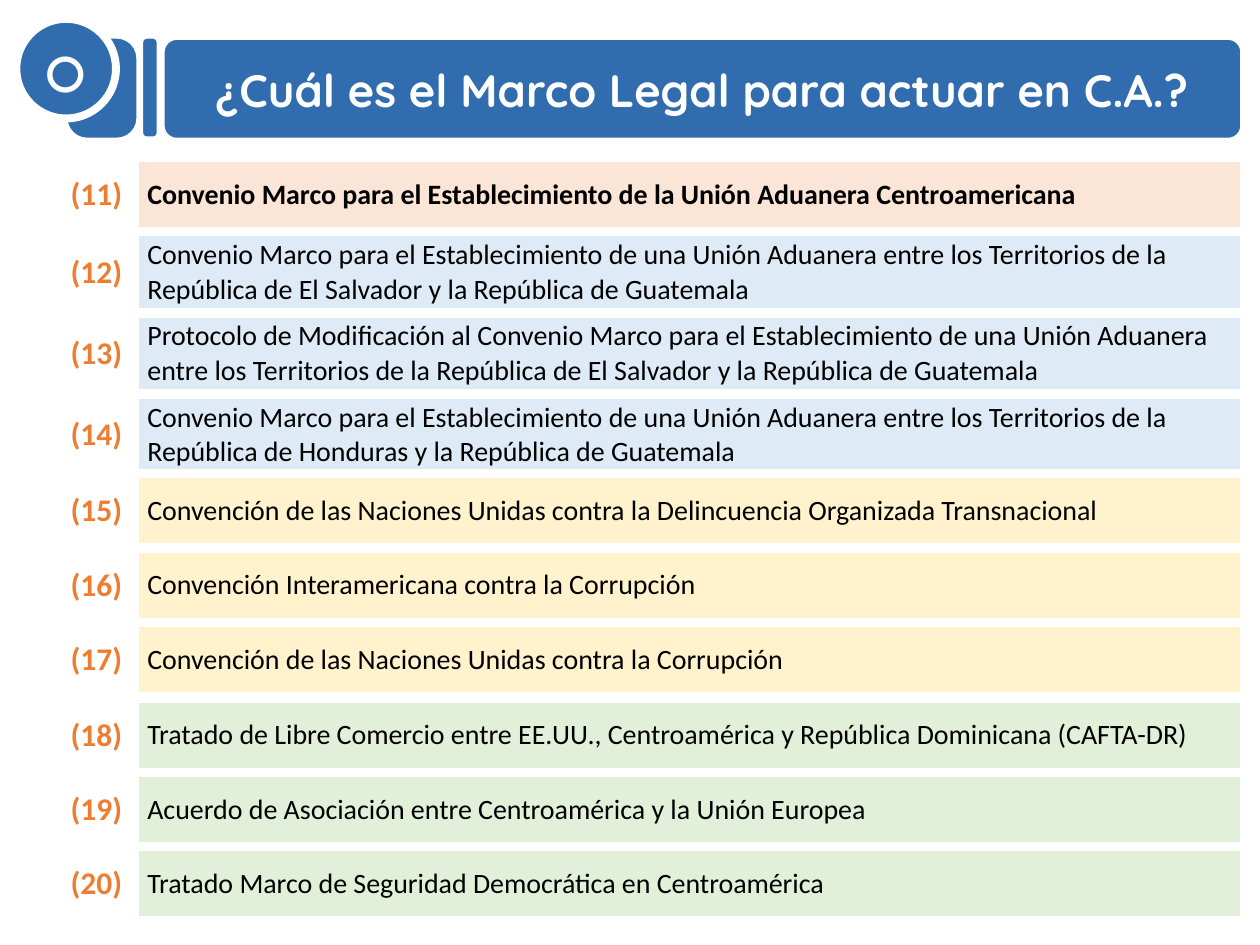
from dataclasses import dataclass

from lxml import etree
from pptx import Presentation
from pptx.dml.color import RGBColor
from pptx.enum import shapes, text
from pptx.oxml.ns import qn
from pptx.util import Inches, Pt


@dataclass(frozen=True)
class Theme:
    blue: str = "316CAE"
    white: str = "FFFFFF"
    black: str = "000000"
    orange: str = "ED7D31"
    peach: str = "FBE5D6"
    sky: str = "DEEBF7"
    cream: str = "FFF2CC"
    mint: str = "E2F0D9"
    body_font: str = "Calibri"
    title_font: str = "Quicksand"
    ring_size: int = 40
    title_size: int = 26
    number_size: int = 18
    body_size: int = 16


class SlideBuilder:
    def __init__(self, slide, theme):
        self.s = slide
        self.theme = theme

    def label(self, tf, content, size, color, font=None, bold=False, align=None):
        tf.text = content
        p = tf.paragraphs[0]
        p.alignment = align
        r = p.runs[0]
        r.font.size = Pt(size)
        r.font.name = font or self.theme.body_font
        r.font.bold = bold
        r.font.color.rgb = RGBColor.from_string(color)

    def panel(self, kind, left, top, width, height, corner=None, line=1):
        sp = self.s.shapes.add_shape(
            kind, Inches(left), Inches(top), Inches(width), Inches(height))
        sp.shadow.inherit = False
        if corner is not None:
            sp.adjustments[0] = corner
        sp.fill.solid()
        sp.fill.fore_color.rgb = RGBColor.from_string(self.theme.blue)
        sp.line.color.rgb = RGBColor.from_string(self.theme.white)
        sp.line.width = Pt(line)
        sp.text_frame.vertical_anchor = text.MSO_ANCHOR.MIDDLE
        return sp

    def borders(self, cell, **widths):
        tc_pr = cell._tc.get_or_add_tcPr()
        for side, width in widths.items():
            ln = etree.SubElement(tc_pr, qn(f"a:ln{side}"), w=str(Pt(width)))
            fill = etree.SubElement(ln, qn("a:solidFill"))
            etree.SubElement(fill, qn("a:srgbClr"), val=self.theme.white)

    def agreements(self, top, first, rows):
        """Numbered table; rows holds (agreement, fill colour, bold)."""
        t = self.theme
        frame = self.s.shapes.add_table(
            len(rows), 2, Inches(0.13), Inches(top),
            Inches(9.72), Inches(ROW_HEIGHT * len(rows)))
        table = frame.table
        table.first_row = table.horz_banding = False
        for column, width in zip(table.columns, (0.94, 8.78)):
            column.width = Inches(width)
        for i, (agreement, color, bold) in enumerate(rows):
            table.rows[i].height = Inches(ROW_HEIGHT)
            number, name = table.cell(i, 0), table.cell(i, 1)
            self.label(number.text_frame, f"({first + i})", t.number_size,
                       t.orange, bold=True, align=text.PP_ALIGN.RIGHT)
            self.label(name.text_frame, agreement, t.body_size, t.black, bold=bold)
            self.borders(number, L=1, R=6, T=6, B=6)
            self.borders(name, L=6, R=1, T=6, B=6)
            number.fill.background()
            name.fill.solid()
            name.fill.fore_color.rgb = RGBColor.from_string(color)
            for cell in (number, name):
                cell.vertical_anchor = text.MSO_ANCHOR.MIDDLE


ROW_HEIGHT = 0.59
THEME = Theme()
UNION = "Convenio Marco para el Establecimiento de una Unión Aduanera"

# Each table: top, first number, rows
TABLES = [
    (1.25, 11, [
        ("Convenio Marco para el Establecimiento de la Unión Aduanera "
         "Centroamericana", THEME.peach, True),
        (f"{UNION} entre los Territorios de la República de El Salvador "
         "y la República de Guatemala", THEME.sky, False),
        ("Protocolo de Modificación al Convenio Marco para el Establecimiento "
         "de una Unión Aduanera entre los Territorios de la República de "
         "El Salvador y la República de Guatemala", THEME.sky, False),
        (f"{UNION} entre los Territorios de la República de Honduras "
         "y la República de Guatemala", THEME.sky, False),
    ]),
    (3.76, 15, [
        ("Convención de las Naciones Unidas contra la Delincuencia "
         "Organizada Transnacional", THEME.cream, False),
        ("Convención Interamericana contra la Corrupción", THEME.cream, False),
        ("Convención de las Naciones Unidas contra la Corrupción",
         THEME.cream, False),
    ]),
    (5.54, 18, [
        ("Tratado de Libre Comercio entre EE.UU., Centroamérica y República "
         "Dominicana (CAFTA-DR)", THEME.mint, False),
        ("Acuerdo de Asociación entre Centroamérica y la Unión Europea",
         THEME.mint, False),
        ("Tratado Marco de Seguridad Democrática en Centroamérica",
         THEME.mint, False),
    ]),
]


def main():
    prs = Presentation()
    prs.slide_width, prs.slide_height = Inches(10), Inches(7.5)
    b = SlideBuilder(prs.slides.add_slide(prs.slide_layouts[6]), THEME)
    rounded = shapes.MSO_SHAPE.ROUNDED_RECTANGLE

    # Header: ring emblem, bar and title
    b.panel(rounded, 0.53, 0.3, 0.56, 0.8, 0.29)
    ring = b.panel(shapes.MSO_SHAPE.OVAL, 0.13, 0.15, 0.79, 0.79, line=4.5)
    b.label(ring.text_frame, "○", THEME.ring_size, THEME.white,
            align=text.PP_ALIGN.CENTER)
    b.panel(rounded, 1.13, 0.3, 0.12, 0.79, 0.29)
    title = b.panel(rounded, 1.3, 0.31, 8.55, 0.79, 0.13)
    b.label(title.text_frame, "¿Cuál es el Marco Legal para actuar en C.A.?",
            THEME.title_size, THEME.white, THEME.title_font, True,
            text.PP_ALIGN.CENTER)

    # Agreements, grouped by colour
    for top, first, rows in TABLES:
        b.agreements(top, first, rows)

    prs.save("out.pptx")


if __name__ == "__main__":
    main()
